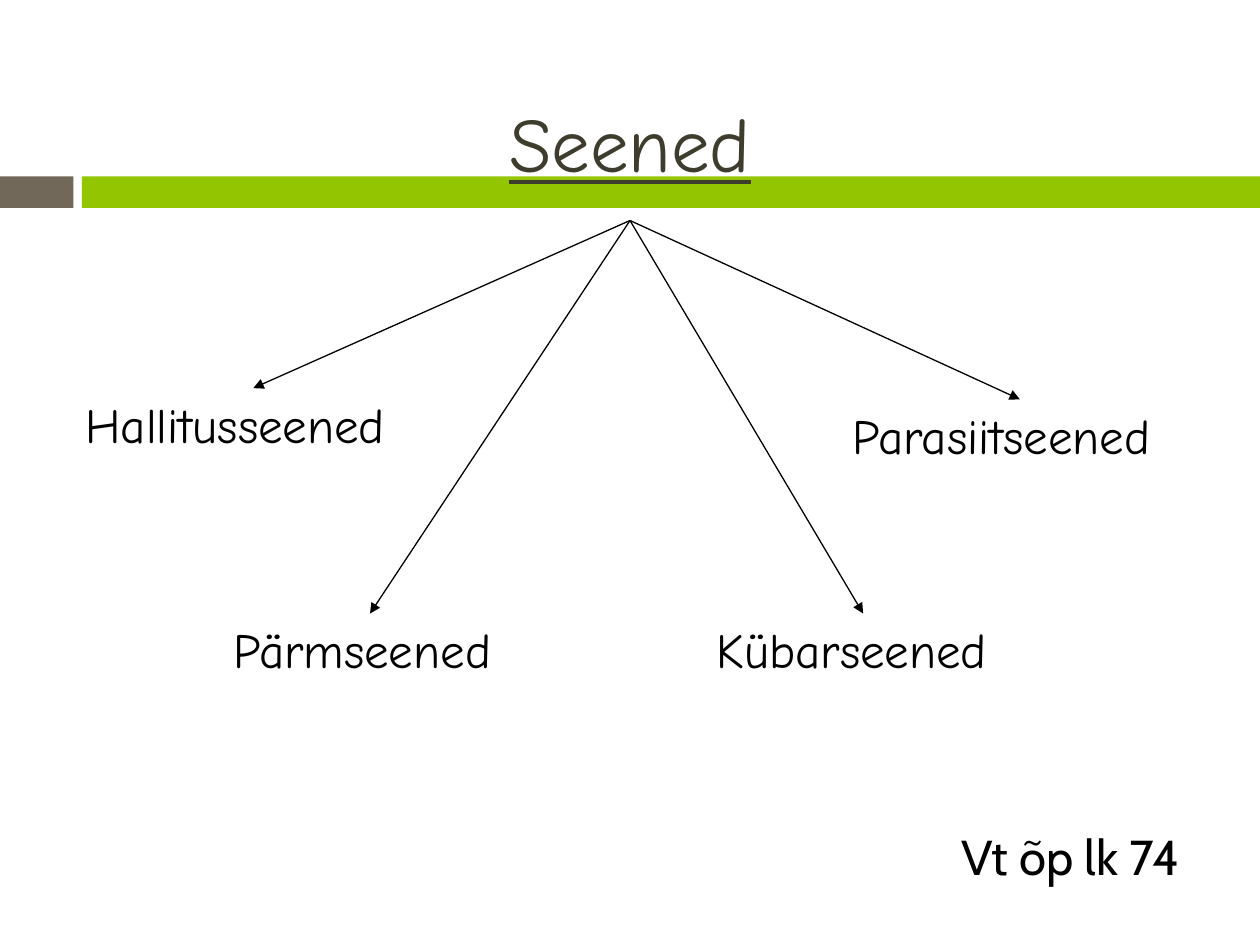
import pptx
import pptx.dml.color
import pptx.enum.shapes
import pptx.enum.text
import pptx.oxml
import pptx.oxml.ns
import pptx.util

Pt = pptx.util.Pt
RGBColor = pptx.dml.color.RGBColor

BLACK = RGBColor(0x00, 0x00, 0x00)
GREEN = RGBColor(0x94, 0xC6, 0x00)
BROWN = RGBColor(0x71, 0x68, 0x5A)
OLIVE = RGBColor(0x3E, 0x3D, 0x2D)

SLIDE_W, SLIDE_H = 720, 540
BAR_TOP, BAR_H = 100.8, 18
LABEL_H = 41.2
KINDS = [
    ("Hallitusseened", 41.8, 221.8, 205.9),
    ("Pärmseened", 126.5, 350.6, 169.9),
    ("Kübarseened", 402.5, 350.6, 181.4),
    ("Parasiitseened", 480.2, 228.2, 205.2),
]


class Deck:
    heading_font = "Comic Neue"
    note_font = "Cabin"
    title_size = 44
    label_size = 28
    line_width = 0.75

    def __init__(self, prs):
        self.s = prs.slides.add_slide(prs.slide_layouts[5])

    def run(self, p, text, font, size, color):
        r = p.add_run()
        r.text = text
        r.font.name = font
        r.font.size = Pt(size)
        r.font.color.rgb = color
        return r

    def bar(self, x, w, color):
        sp = self.s.shapes.add_shape(
            pptx.enum.shapes.MSO_SHAPE.RECTANGLE, Pt(x), Pt(BAR_TOP), Pt(w), Pt(BAR_H))
        sp.shadow.inherit = False
        sp.fill.solid()
        sp.fill.fore_color.rgb = color
        sp.line.fill.background()

    def title(self, text, x, y, w, h):
        sp = self.s.shapes.title
        sp.left, sp.top, sp.width, sp.height = Pt(x), Pt(y), Pt(w), Pt(h)
        sp.element.getparent().append(sp.element)
        tf = sp.text_frame
        tf.vertical_anchor = pptx.enum.text.MSO_ANCHOR.MIDDLE
        p = tf.paragraphs[0]
        p.alignment = pptx.enum.text.PP_ALIGN.CENTER
        r = self.run(p, text, self.heading_font, self.title_size, OLIVE)
        r.font.underline = True
        return sp

    def label(self, text, x, y, w, font):
        sp = self.s.shapes.add_textbox(Pt(x), Pt(y), Pt(w), Pt(LABEL_H))
        tf = sp.text_frame
        tf.word_wrap = False
        tf.auto_size = pptx.enum.text.MSO_AUTO_SIZE.SHAPE_TO_FIT_TEXT
        self.run(tf.paragraphs[0], text, font, self.label_size, BLACK)
        return sp

    def arrow(self, start, end):
        cxn = self.s.shapes.add_connector(
            pptx.enum.shapes.MSO_CONNECTOR.STRAIGHT, 0, 0, 0, 0)
        cxn.begin_connect(start, 2)
        cxn.end_connect(end, 0)
        cxn.line.color.rgb = BLACK
        cxn.line.width = Pt(self.line_width)
        ns = pptx.oxml.ns.nsdecls("a")
        cxn.line._get_or_add_ln().append(
            pptx.oxml.parse_xml(f'<a:tailEnd {ns} type="triangle"/>'))
        cxn.element.spPr.append(pptx.oxml.parse_xml(f"<a:effectLst {ns}/>"))


def main():
    prs = pptx.Presentation()
    prs.slide_width, prs.slide_height = Pt(SLIDE_W), Pt(SLIDE_H)
    deck = Deck(prs)
    deck.bar(0, 42, BROWN)
    deck.bar(46.8, SLIDE_W - 46.8, GREEN)
    title = deck.title("Seened", 54, 36, 612, 90)
    labels = [deck.label(*kind, deck.heading_font) for kind in KINDS]
    for label in labels:
        deck.arrow(title, label)
    deck.label("Vt õp lk 74", 542.2, 468.7, 142.6, deck.note_font)
    prs.save("out.pptx")


if __name__ == "__main__":
    main()
